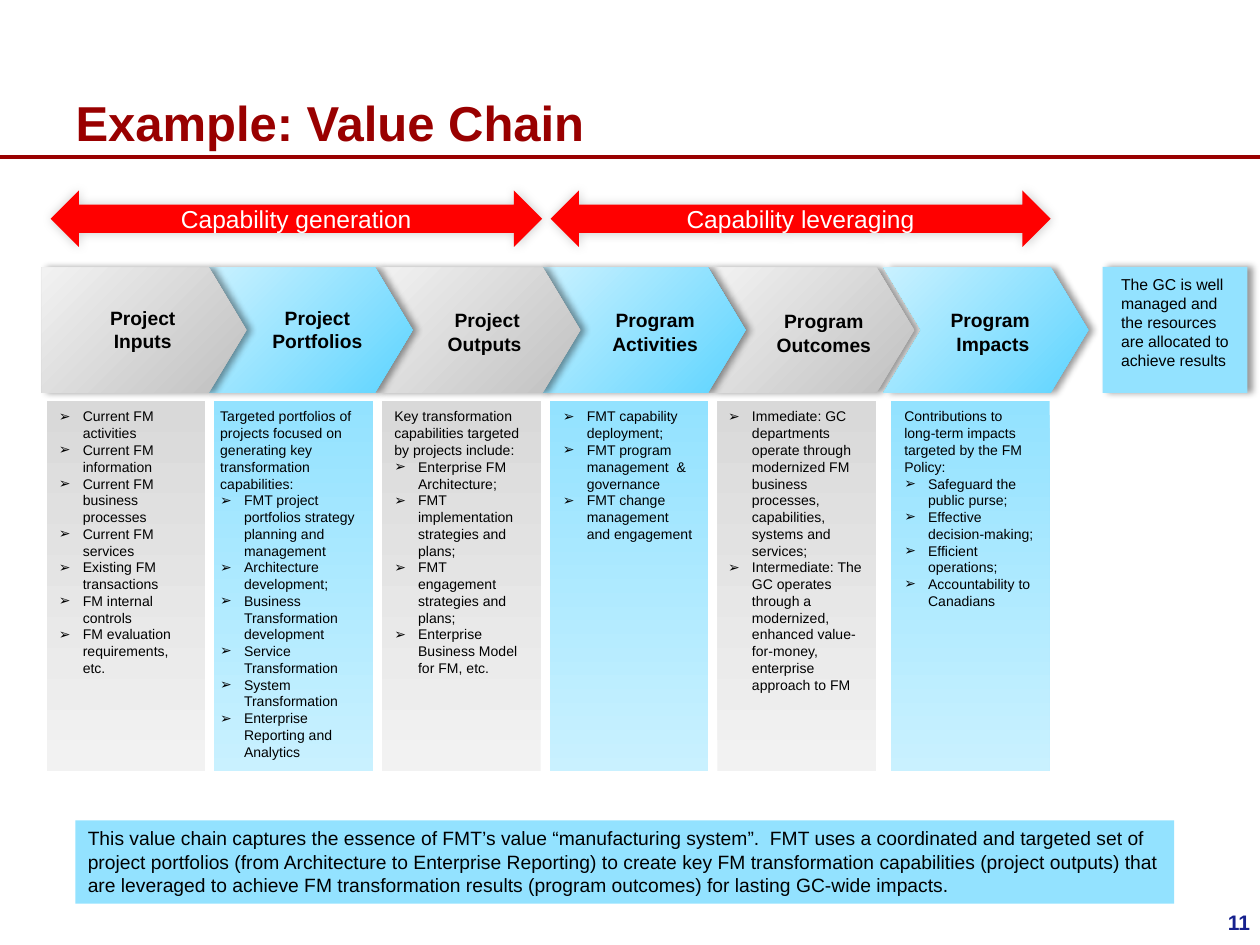
from collections import namedtuple
from dataclasses import dataclass

from lxml.etree import SubElement
from pptx import Presentation
from pptx.dml.color import RGBColor as RGB
from pptx.enum.shapes import MSO_CONNECTOR as CONN, MSO_SHAPE as SHAPE
from pptx.enum.text import MSO_ANCHOR as ANCHOR, MSO_AUTO_SIZE as AUTOSIZE, PP_ALIGN as ALIGN
from pptx.oxml.ns import qn
from pptx.util import Cm, Pt


@dataclass(frozen=True)
class Theme:
    font: str = "Arial"
    black: str = "000000"
    white: str = "FFFFFF"
    title: str = "990000"
    number: str = "16218E"
    arrow: str = "FF0000"
    blue: str = "93E2FF"
    panels: tuple = (("F2F2F2", "D9D9D9", 90), ("93E2FF", "C9F1FF", 270))
    chevrons: tuple = (("BFBFBF", "F2F2F2", 135), ("5DD4FF", "C9F1FF", 135))
    title_size: int = 28
    band_size: int = 14
    number_size: int = 12
    label_size: int = 11
    goal_size: int = 9
    body_size: int = 8


T = Theme()
Box = namedtuple("Box", "x y w h")
Stage = namedtuple("Stage", "label label_box chevron_x text_dx text_w intro items")

PANEL = Box(0.94, 8.08, 3.2, 7.47)
PANEL_STEP = 3.38
LAST_PANEL_X = 17.96
CHEVRON = Box(0, 5.39, 4.13, 2.53)
CHEVRON_TIP = 0.76
BULLET_INDENT = 0.48

STAGES = [
    Stage("Project\nInputs", Box(1.7, 6.05, 2.36, 1.19), 0.84, 0, 3.18, None, [
        "Current FM activities", "Current FM information",
        "Current FM business processes", "Current FM services",
        "Existing FM transactions", "FM internal controls",
        "FM evaluation requirements, etc."]),
    Stage("Project\nPortfolios", Box(5.18, 6.05, 2.44, 1.19), 4.19, -0.13, 3.51,
          "Targeted portfolios of projects focused on generating key "
          "transformation capabilities:", [
              "FMT project portfolios strategy planning and management",
              "Architecture development;", "Business Transformation development",
              "Service Transformation", "System Transformation",
              "Enterprise Reporting and Analytics"]),
    Stage(" Project\nOutputs", Box(8.59, 6.1, 2.36, 1.19), 7.57, 0, 3.2,
          "Key transformation capabilities targeted by projects include:", [
              "Enterprise FM Architecture;",
              "FMT implementation strategies and plans;",
              "FMT engagement strategies and plans;",
              "Enterprise Business Model for FM, etc."]),
    Stage("Program\nActivities", Box(11.99, 6.1, 2.44, 1.19), 10.9, 0.02, 3.35, None, [
        "FMT capability deployment;", "FMT program management  & \ngovernance",
        "FMT change management\nand engagement"]),
    Stage("Program\nOutcomes", Box(15.39, 6.12, 2.44, 1.19), 14.3, -0.03, 3.35, None, [
        "Immediate: GC departments operate through modernized FM business "
        "processes, capabilities, systems and services;",
        "Intermediate: The GC operates through a modernized, enhanced "
        "value-for-money, enterprise approach to FM"]),
    Stage("Program\n Impacts", Box(18.67, 6.1, 2.59, 1.19), 17.81, 0.02, 3.18,
          "Contributions to long-term impacts targeted by the FM Policy:", [
              "Safeguard the public purse;", "Effective decision-making;",
              "Efficient operations;", "Accountability to Canadians"]),
]

BANDS = [("Capability generation", Box(1.02, 3.84, 9.91, 1.14)),
         ("Capability leveraging", Box(11.1, 3.84, 10.08, 1.14))]
GOAL = "The GC is well managed and the resources are allocated to achieve results"
SUMMARY = (
    "This value chain captures the essence of FMT’s value “manufacturing system”.  "
    "FMT uses a coordinated and targeted set of project portfolios (from Architecture "
    "to Enterprise Reporting) to create key FM transformation capabilities (project "
    "outputs) that are leveraged to achieve FM transformation results (program "
    "outcomes) for lasting GC-wide impacts.")


def cm(box):
    return [Cm(v) for v in box]


def set_attrs(obj, values):
    for name, value in values.items():
        setattr(obj, name, value)


def write(p, text, size, color=T.black, bold=False, align=ALIGN.LEFT, bullet=False):
    p.alignment = align
    if bullet:
        pPr = p._p.get_or_add_pPr()
        pPr.set("marL", str(Cm(BULLET_INDENT)))
        pPr.set("indent", str(-Cm(BULLET_INDENT)))
        SubElement(pPr, qn("a:buFont"), typeface=T.font)
        SubElement(pPr, qn("a:buChar"), char="➢")
    p.text = text
    for r in p.runs:
        set_attrs(r.font, {"name": T.font, "size": Pt(size), "bold": bold})
        r.font.color.rgb = RGB.from_string(color)
    for br in p._p.findall(qn("a:br")):
        SubElement(br, qn("a:rPr"), sz=str(size * 100))


def add_text(s, box, text, size, **style):
    tf = s.shapes.add_textbox(*cm(box)).text_frame
    tf.word_wrap = True
    write(tf.paragraphs[0], text, size, **style)
    return tf


def paint(sp, fill, shadow=None):
    sp.shadow.inherit = False
    sp.line.fill.background()
    if isinstance(fill, str):
        sp.fill.solid()
        sp.fill.fore_color.rgb = RGB.from_string(fill)
    else:
        sp.fill.gradient()
        sp.fill.gradient_angle = fill[2]
        for stop, color, position in zip(sp.fill.gradient_stops, fill, (0, 1)):
            stop.color.rgb = RGB.from_string(color)
            stop.position = position
    if shadow:
        alpha, blur, dist, angle = shadow
        effects = sp._element.spPr.find(qn("a:effectLst"))
        outer = SubElement(effects, qn("a:outerShdw"), blurRad=str(Pt(blur)),
                           dist=str(Pt(dist)), dir=str(angle * 60000),
                           algn="ctr", rotWithShape="0")
        rgb = SubElement(outer, qn("a:srgbClr"), val=T.black)
        SubElement(rgb, qn("a:alpha"), val=str(alpha * 1000))


def add_shape(s, kind, box, fill, shadow=None):
    sp = s.shapes.add_shape(kind, *cm(box))
    paint(sp, fill, shadow)
    return sp


def add_heading(s, box):
    sp = s.shapes.title
    set_attrs(sp, dict(zip(("left", "top", "width", "height"), cm(box))))
    set_attrs(sp.text_frame, {"vertical_anchor": ANCHOR.BOTTOM, "word_wrap": True,
                              "auto_size": AUTOSIZE.NONE})
    write(sp.text_frame.paragraphs[0], "Example: Value Chain", T.title_size, T.title, True)
    y = Cm(box.y + box.h)
    rule = s.shapes.add_connector(CONN.STRAIGHT, 0, y, Cm(25.4), y)
    rule.line.width = Pt(2.25)
    rule.line.color.rgb = RGB.from_string(T.title)
    SubElement(rule._element.spPr, qn("a:effectLst"))


def add_chevron(s, box, fill, notched):
    x, y, w, h = box
    points = [(x + w - CHEVRON_TIP, y), (x + w, y + h / 2),
              (x + w - CHEVRON_TIP, y + h), (x, y + h)]
    if notched:
        points.append((x + CHEVRON_TIP, y + h / 2))
    builder = s.shapes.build_freeform(Cm(x), Cm(y))
    builder.add_line_segments([(Cm(px), Cm(py)) for px, py in points], close=True)
    paint(builder.convert_to_shape(), fill, (40, 4, 3, 0))


def add_stage(s, index, stage, panel):
    add_shape(s, SHAPE.RECTANGLE, panel, T.panels[index % 2])
    add_chevron(s, CHEVRON._replace(x=stage.chevron_x), T.chevrons[index % 2], index > 0)
    add_text(s, stage.label_box, stage.label, T.label_size, bold=True, align=ALIGN.CENTER)
    box = Box(panel.x + stage.text_dx, panel.y + 0.02, stage.text_w, panel.h)
    lines = [(stage.intro, False)] if stage.intro else []
    lines += [(item, True) for item in stage.items]
    tf = add_text(s, box, lines[0][0], T.body_size, bullet=lines[0][1])
    for text, bullet in lines[1:]:
        write(tf.add_paragraph(), text, T.body_size, bullet=bullet)


def add_band(s, box, text):
    tf = add_shape(s, SHAPE.LEFT_RIGHT_ARROW, box, T.arrow, (20, 6, 0, 315)).text_frame
    set_attrs(tf, {"word_wrap": False, "vertical_anchor": ANCHOR.MIDDLE})
    write(tf.paragraphs[0], text, T.band_size, T.white, align=ALIGN.CENTER)


def add_goal(s, box):
    add_shape(s, SHAPE.RECTANGLE, box, T.blue, (40, 4, 3, 0))
    add_text(s, Box(box.x + 0.12, box.y + 0.03, 2.74, 2.18), GOAL, T.goal_size)


def add_summary(s, box):
    tf = add_shape(s, SHAPE.RECTANGLE, box, T.blue).text_frame
    set_attrs(tf, {"word_wrap": True, "vertical_anchor": ANCHOR.TOP})
    write(tf.paragraphs[0], SUMMARY, T.label_size)


def main():
    prs = Presentation()
    set_attrs(prs, {"slide_width": Cm(25.4), "slide_height": Cm(19.05)})
    s = prs.slides.add_slide(prs.slide_layouts[5])
    add_heading(s, Box(1.27, 0.2, 20.75, 2.97))
    add_text(s, Box(19.53, 18.21, 5.92, 0.84), "11", T.number_size,
             color=T.number, bold=True, align=ALIGN.RIGHT)
    add_goal(s, Box(22.23, 5.38, 2.92, 2.54))
    last = len(STAGES) - 1
    for i in [*reversed(range(last)), last]:
        x = LAST_PANEL_X if i == last else PANEL.x + i * PANEL_STEP
        add_stage(s, i, STAGES[i], PANEL._replace(x=x))
    add_summary(s, Box(1.52, 16.54, 22.15, 1.68))
    for text, box in BANDS:
        add_band(s, box, text)
    prs.save("out.pptx")


if __name__ == "__main__":
    main()
